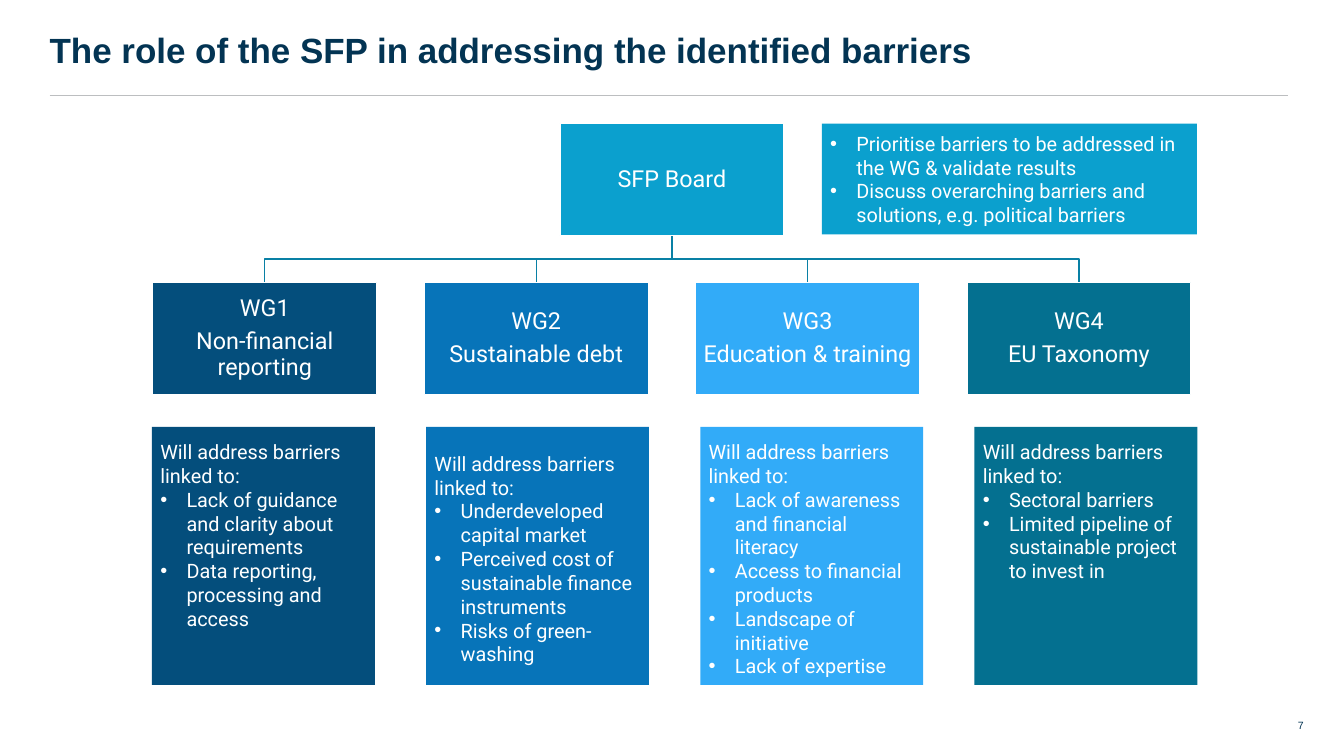
from pptx import Presentation
from pptx.dml.color import RGBColor
from pptx.enum.shapes import MSO_CONNECTOR as CONN, MSO_SHAPE as SHAPE
from pptx.enum.text import MSO_ANCHOR as ANCHOR, PP_ALIGN as ALIGN
from pptx.oxml.ns import qn
from pptx.util import Pt
from lxml.etree import SubElement

NAVY = RGBColor(0x03, 0x34, 0x53)
GREY = RGBColor(0xBC, 0xBE, 0xC0)
TEAL = RGBColor(0x09, 0x80, 0xA5)
CYAN = RGBColor(0x0B, 0xA0, 0xCE)
WHITE = RGBColor(0xFF, 0xFF, 0xFF)
DARK_BLUE = RGBColor(0x04, 0x4E, 0x7C)
BLUE = RGBColor(0x07, 0x74, 0xB9)
LIGHT_BLUE = RGBColor(0x32, 0xAB, 0xF8)
PETROL = RGBColor(0x04, 0x70, 0x90)

INTRO = "Will address barriers linked to:"
GROUPS = [
    ("WG1", "Non-financial reporting", DARK_BLUE, 11,
     ["Lack of guidance and clarity about requirements",
      "Data reporting, processing and access"]),
    ("WG2", "Sustainable debt", BLUE, 21,
     ["Underdeveloped capital market",
      "Perceived cost of sustainable finance instruments",
      "Risks of green-washing"]),
    ("WG3", "Education & training", LIGHT_BLUE, 11,
     ["Lack of awareness and financial literacy",
      "Access to financial products",
      "Landscape of initiative",
      "Lack of expertise"]),
    ("WG4", "EU Taxonomy", PETROL, 11,
     ["Sectoral barriers",
      "Limited pipeline of sustainable project to invest in"]),
]


def write(sp, lines, size=17, font="Roboto", color=WHITE, bold=False,
          align=ALIGN.LEFT, anchor=ANCHOR.MIDDLE, insets=(7.2, 3.6, 7.2, 3.6),
          spacing=1.0, after=0, bullets_from=None):
    tf = sp.text_frame
    tf.word_wrap = True
    tf.vertical_anchor = anchor
    tf.margin_left, tf.margin_top, tf.margin_right, tf.margin_bottom = map(Pt, insets)
    for i, line in enumerate(lines):
        p = tf.add_paragraph() if i else tf.paragraphs[0]
        p.alignment = align
        p.line_spacing = spacing
        p.space_before = Pt(0)
        p.space_after = Pt(after)
        if bullets_from is not None and i >= bullets_from:
            pPr = p._p.get_or_add_pPr()
            pPr.set("marL", str(Pt(22.5)))
            pPr.set("indent", str(-Pt(22.5)))
            SubElement(pPr, qn("a:buFont")).set("typeface", "Arial")
            SubElement(pPr, qn("a:buChar")).set("char", "•")
        r = p.add_run()
        r.text = line
        r.font.size = Pt(size)
        r.font.name = font
        r.font.bold = bold
        r.font.color.rgb = color


def add_box(x, y, w, h, fill, outlined=False):
    sp = s.shapes.add_shape(SHAPE.RECTANGLE, Pt(x), Pt(y), Pt(w), Pt(h))
    sp.shadow.inherit = False
    sp.fill.solid()
    sp.fill.fore_color.rgb = fill
    if outlined:
        sp.line.color.rgb = WHITE
        sp.line.width = Pt(1)
    else:
        sp.line.fill.background()
    return sp


prs = Presentation()
prs.slide_width = Pt(1152)
prs.slide_height = Pt(648)
s = prs.slides.add_slide(prs.slide_layouts[5])

title = s.shapes.title
title.left, title.top, title.width, title.height = Pt(42.5), Pt(9.4), Pt(1048), Pt(71)
write(title, ["The role of the SFP in addressing the identified barriers"], size=30,
      font="Arial", color=NAVY, bold=True, insets=(0, 3.6, 0, 3.6), spacing=0.9)

rule = s.shapes.add_connector(CONN.STRAIGHT, Pt(42.5), Pt(81.5), Pt(1104), Pt(81.5))
rule.line.color.rgb = GREY
rule.line.width = Pt(0.5)
SubElement(rule._element.spPr, qn("a:effectLst"))

number = s.shapes.add_textbox(Pt(897), Pt(604), Pt(227.5), Pt(34.5))
write(number, ["7"], size=9, font="Arial", color=NAVY, align=ALIGN.RIGHT)

node_w, node_h, node_y = 192, 96, 242
board_x, board_y = 480, 106
center = board_x + node_w / 2
node_style = dict(size=20, align=ALIGN.CENTER, insets=(0.7, 0.7, 0.7, 0.7),
                  spacing=0.9, after=7)

node_xs = [131 + 232.6 * i for i in range(len(GROUPS))]
for x in node_xs:
    drop = x + node_w / 2
    branch = s.shapes.build_freeform(Pt(center), Pt(202))
    branch.add_line_segments([(Pt(center), Pt(222)), (Pt(drop), Pt(222)),
                              (Pt(drop), Pt(node_y))], close=False)
    sp = branch.convert_to_shape()
    sp.shadow.inherit = False
    sp.fill.background()
    sp.line.color.rgb = TEAL
    sp.line.width = Pt(1)

board = add_box(board_x, board_y, node_w, node_h, CYAN, outlined=True)
write(board, ["SFP Board"], **node_style)
tasks = add_box(704.5, board_y, 321.5, 95, CYAN)
write(tasks, ["Prioritise barriers to be addressed in the WG & validate results",
              "Discuss overarching barriers and solutions, e.g. political barriers"],
      bullets_from=0)

for i, (code, topic, color, top, barriers) in enumerate(GROUPS):
    node = add_box(node_xs[i], node_y, node_w, node_h, color, outlined=True)
    write(node, [code, topic], **node_style)
    detail = add_box(130.3 + 235 * i, 366, 191, 221, color)
    write(detail, [INTRO] + barriers, anchor=ANCHOR.TOP,
          insets=(7.2, top, 7.2, 3.6), bullets_from=1)

prs.save("out.pptx")
